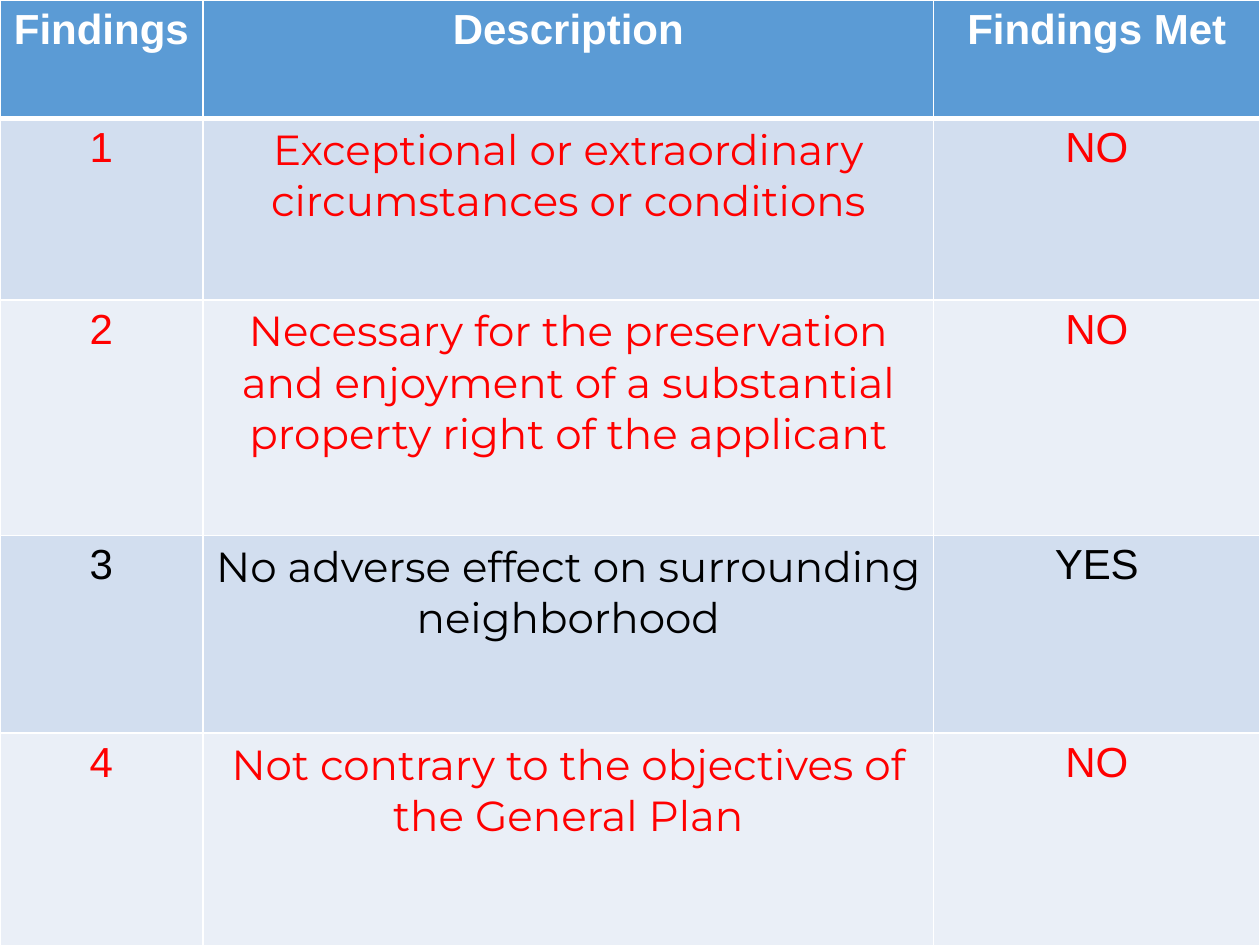
import pptx
import pptx.dml.color
import pptx.enum.text
import pptx.oxml
import pptx.oxml.ns
import pptx.util

RGB = pptx.dml.color.RGBColor
WHITE = RGB(0xFF, 0xFF, 0xFF)
BLACK = RGB(0x00, 0x00, 0x00)
RED = RGB(0xFF, 0x00, 0x00)
BLUE = RGB(0x5B, 0x9B, 0xD5)
BANDS = (RGB(0xD2, 0xDE, 0xEF), RGB(0xEA, 0xEF, 0xF7))

COLUMNS = (1.61, 5.8, 2.59)
ROWS = (0.94, 1.44, 1.87, 1.57, 1.75)
HEADER = ("Findings", "Description", "Findings Met")
FINDINGS = (
    ("Exceptional or extraordinary circumstances or conditions", "NO"),
    ("Necessary for the preservation and enjoyment of a substantial "
     "property right of the applicant", "NO"),
    ("No adverse effect on surrounding neighborhood", "YES"),
    ("Not contrary to the objectives of the General Plan", "NO"),
)


def write_text(tf, text, font="Arial", size=24, color=BLACK, bold=False):
    """Write one centred run of text."""
    p = tf.paragraphs[0]
    p.alignment = pptx.enum.text.PP_ALIGN.CENTER
    r = p.add_run()
    r.text = text
    r.font.name = font
    r.font.size = pptx.util.Pt(size)
    r.font.color.rgb = color
    r.font.bold = bold


def set_borders(cell, color=WHITE, top=1, bottom=1):
    """Draw solid borders, widths in points, on all sides of a cell."""
    tcPr = cell._tc.get_or_add_tcPr()
    for i, (side, width) in enumerate(zip("LRTB", (1, 1, top, bottom))):
        tcPr.insert(i, pptx.oxml.parse_xml(
            f'<a:ln{side} {pptx.oxml.ns.nsdecls("a")} w="{pptx.util.Pt(width)}">'
            f'<a:solidFill><a:srgbClr val="{color}"/></a:solidFill></a:ln{side}>'))


def fill_row(cells, texts, fill, color, fonts=("Arial",) * 3, bold=False, **borders):
    """Fill the cells of one table row."""
    for cell, text, font in zip(cells, texts, fonts):
        cell.fill.solid()
        cell.fill.fore_color.rgb = fill
        set_borders(cell, **borders)
        write_text(cell.text_frame, text, font=font, color=color, bold=bold)


def add_findings_table(s):
    """Add the table of findings across the whole slide."""
    table = s.shapes.add_table(
        len(ROWS), len(COLUMNS), 0, 0,
        pptx.util.Inches(sum(COLUMNS)), pptx.util.Inches(sum(ROWS))).table
    for column, width in zip(table.columns, COLUMNS):
        column.width = pptx.util.Inches(width)
    for row, height in zip(table.rows, ROWS):
        row.height = pptx.util.Inches(height)
    fill_row(table.rows[0].cells, HEADER, BLUE, WHITE, bold=True, bottom=3)
    for i, (description, met) in enumerate(FINDINGS, 1):
        fill_row(table.rows[i].cells, (str(i), description, met),
                 BANDS[(i - 1) % 2], RED if met == "NO" else BLACK,
                 fonts=("Arial", "Montserrat", "Arial"), top=3 if i == 1 else 1)


def main():
    """Build and save the slide."""
    prs = pptx.Presentation()
    prs.slide_width = pptx.util.Inches(10)
    prs.slide_height = pptx.util.Inches(7.5)
    s = prs.slides.add_slide(prs.slide_layouts.get_by_name("Blank"))
    add_findings_table(s)
    prs.save("out.pptx")


if __name__ == "__main__":
    main()
